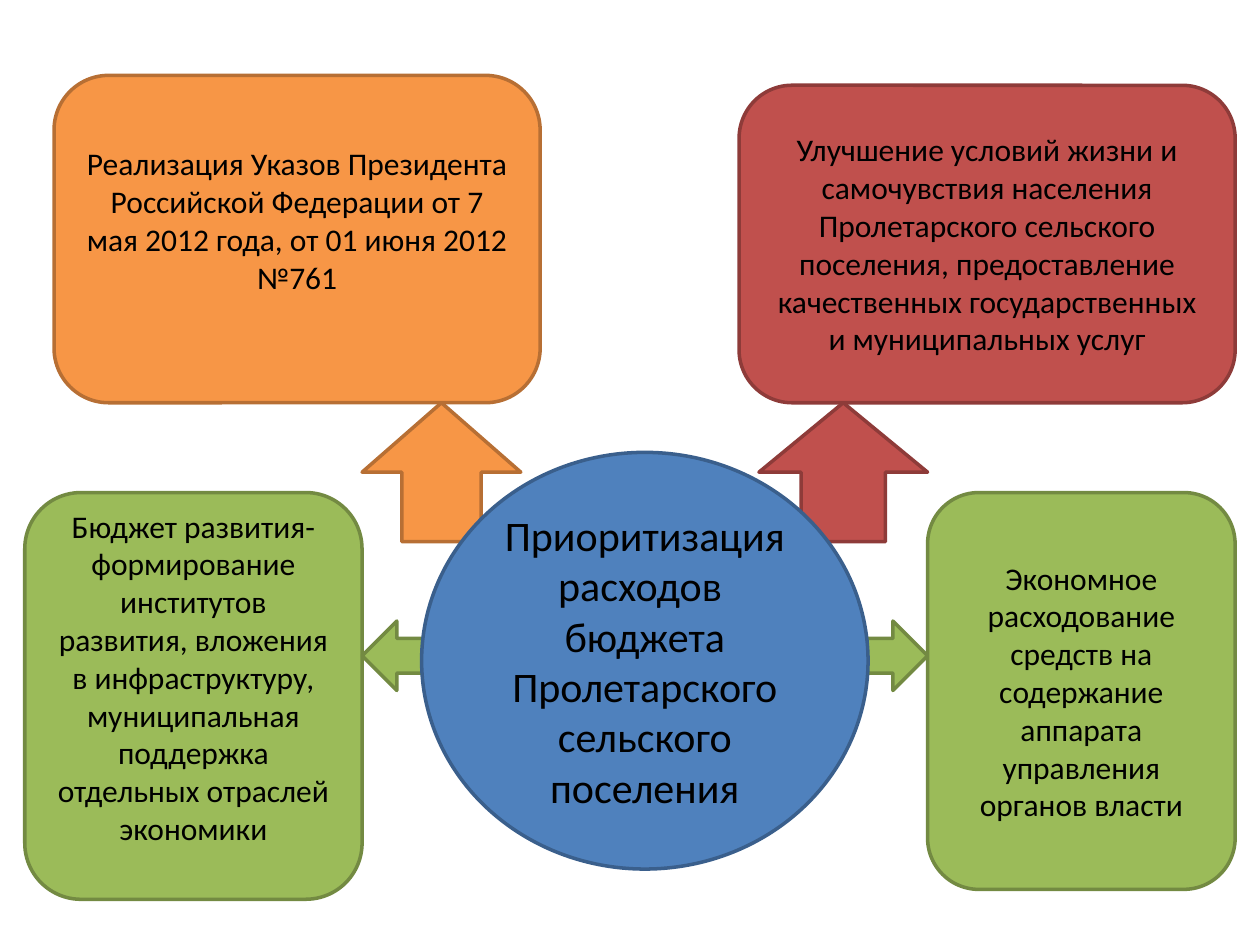
from dataclasses import dataclass

from pptx import Presentation, util as u
from pptx.dml.color import RGBColor
from pptx.enum import shapes, text


@dataclass(frozen=True)
class Theme:
    # each pair is fill, outline
    orange: tuple = ("F79646", "B76F34")
    green: tuple = ("9BBB59", "738A42")
    red: tuple = ("C0504D", "8E3B39")
    blue: tuple = ("4F81BD", "3A5F8C")
    ink: str = "000000"
    font: str = "Calibri"
    card_size: int = 18
    center_size: int = 24
    outline: float = 2


theme = Theme()
kinds = shapes.MSO_SHAPE

deck = Presentation()
deck.slide_width, deck.slide_height = u.Cm(25.4), u.Cm(19.05)
page = deck.slides.add_slide(deck.slide_layouts[6])


def add_block(kind, place, colors):
    block = page.shapes.add_shape(kind, *[u.Cm(length) for length in place])
    block.shadow.inherit = False
    fill, outline = colors
    block.fill.solid()
    block.fill.fore_color.rgb = RGBColor.from_string(fill)
    block.line.color.rgb = RGBColor.from_string(outline)
    block.line.width = u.Pt(theme.outline)
    return block


def write(block, lines, size, bottom=0.13):
    frame = block.text_frame
    frame.word_wrap = True
    frame.vertical_anchor = text.MSO_ANCHOR.MIDDLE
    frame.margin_bottom = u.Cm(bottom)
    frame.text = "\n".join(lines)
    for para in frame.paragraphs:
        para.alignment = text.PP_ALIGN.CENTER
        para.font.name = theme.font
        para.font.size = u.Pt(size)
        para.font.color.rgb = RGBColor.from_string(theme.ink)


# Priority cards: place, colours, bottom inset (the larger one lifts the text), wording
cards = [
    ((1.09, 1.52, 9.8, 6.6), theme.orange, 0.9,
     "Реализация Указов Президента Российской Федерации от 7 мая 2012 года, "
     "от 01 июня 2012 №761"),
    ((0.5, 9.93, 6.8, 8.2), theme.green, 0.9,
     "Бюджет развития-формирование институтов развития, вложения "
     "в инфраструктуру, муниципальная поддержка отдельных отраслей экономики"),
    ((18.7, 9.93, 6.2, 8), theme.green, 0.13,
     "Экономное расходование средств на содержание аппарата управления "
     "органов власти"),
    ((14.9, 1.72, 10, 6.4), theme.red, 0.13,
     "Улучшение условий жизни и самочувствия населения Пролетарского сельского "
     "поселения, предоставление качественных государственных "
     "и муниципальных услуг"),
]
for place, colors, bottom, wording in cards:
    card = add_block(kinds.ROUNDED_RECTANGLE, place, colors)
    write(card, [wording], theme.card_size, bottom)

# Arrows from the centre to the cards
arrows = [
    (kinds.LEFT_ARROW, (7.3, 12.52, 1.4, 1.4), theme.green),
    (kinds.RIGHT_ARROW, (17.3, 12.52, 1.4, 1.4), theme.green),
    (kinds.UP_ARROW, (7.3, 8.12, 3.2, 2.8), theme.orange),
    (kinds.UP_ARROW, (15.3, 8.12, 3.4, 2.8), theme.red),
]
for kind, place, colors in arrows:
    add_block(kind, place, colors)

# The centre covers the arrow tails
center = add_block(kinds.OVAL, (8.5, 9.12, 9, 8.4), theme.blue)
write(center,
      ["Приоритизация", "расходов ", "бюджета", "Пролетарского сельского поселения"],
      theme.center_size)

deck.save("out.pptx")
